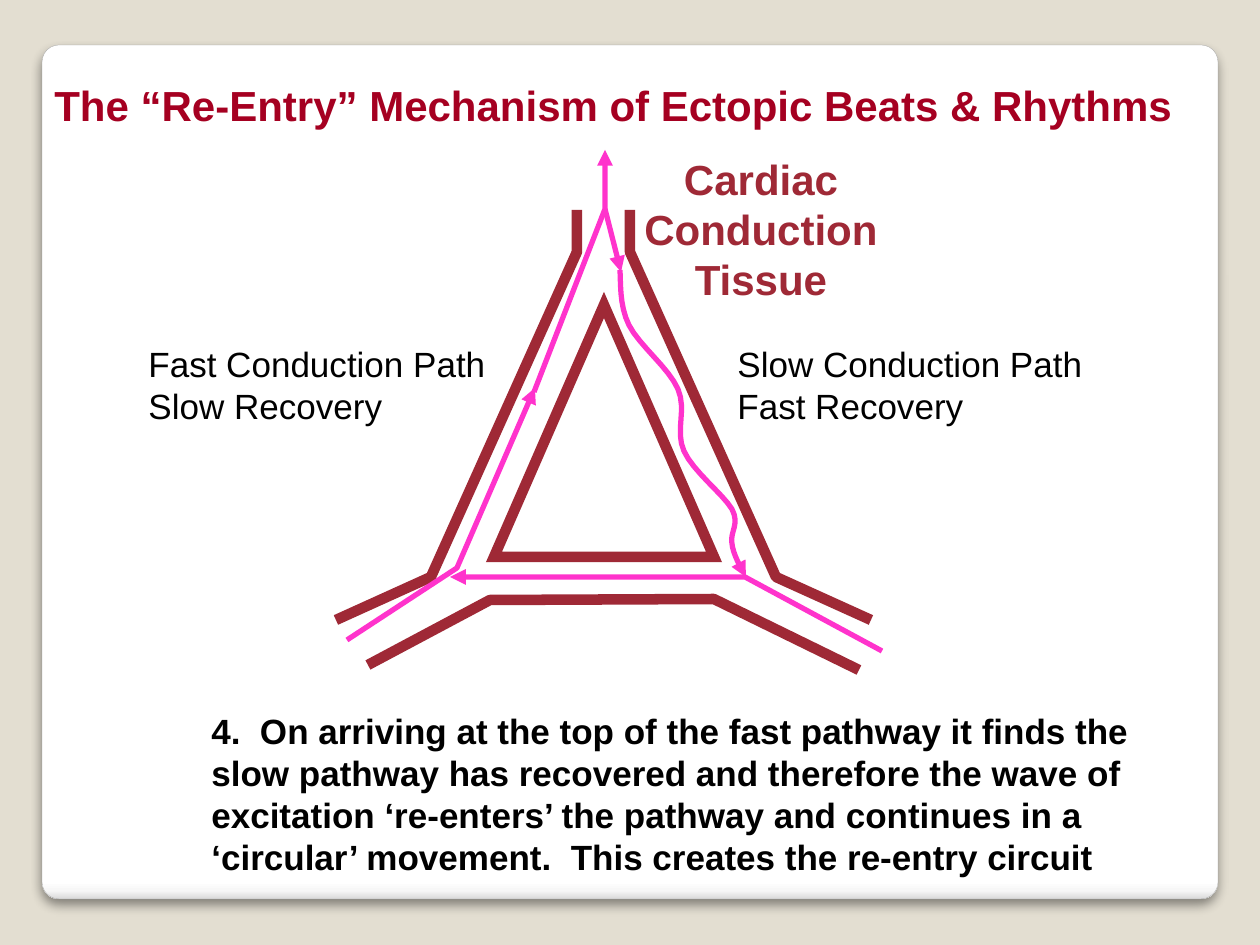
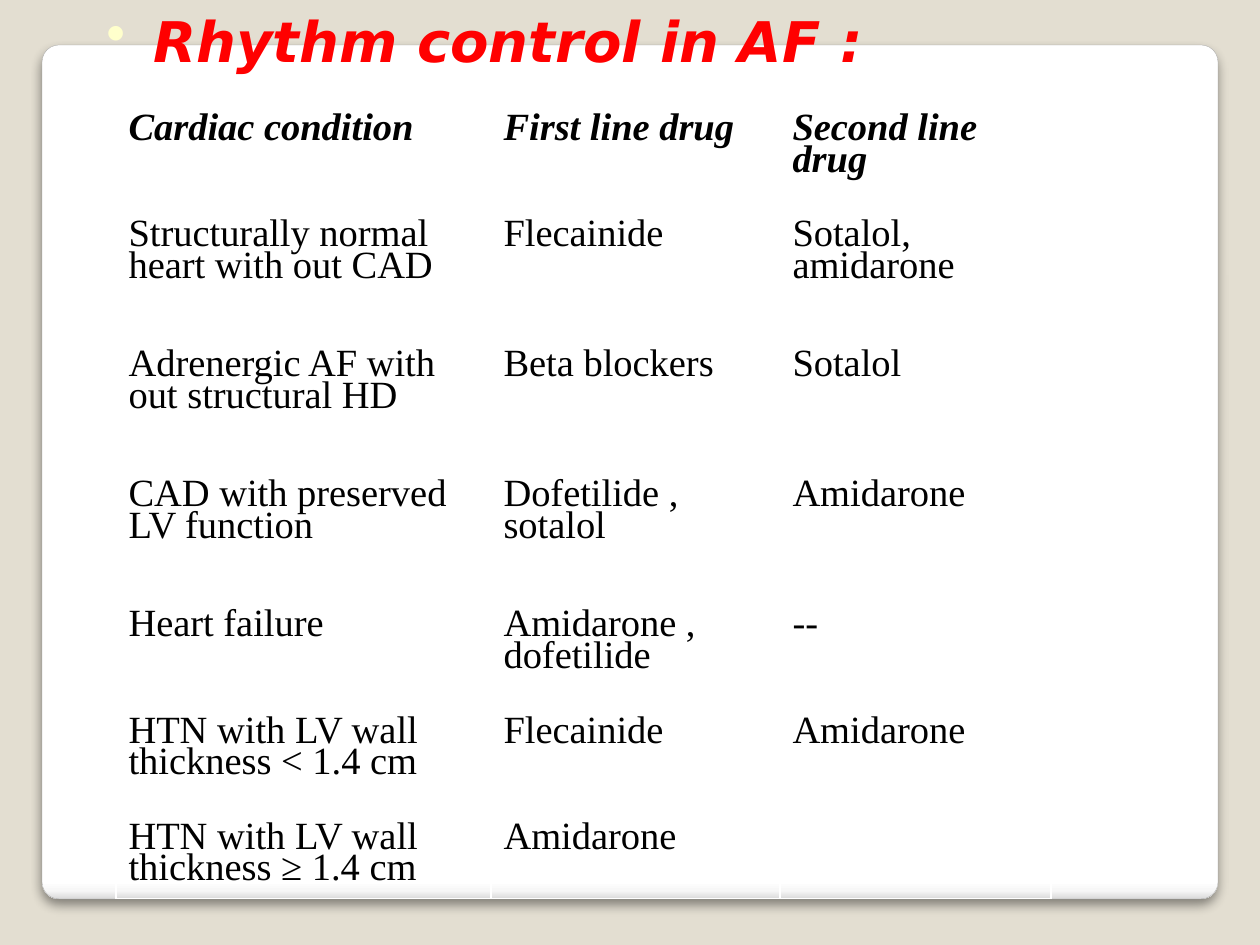
import lxml.etree
import pptx
import pptx.dml.color
import pptx.enum.shapes
import pptx.enum.text
import pptx.oxml.ns
import pptx.util

EMU = 914400 / 126
SLIDE_W, SLIDE_H = 1260, 945
SAND, WHITE, BLACK, EDGE = "E3DED1", "FFFFFF", "000000", "A4A4A4"
TISSUE, IMPULSE, CRIMSON = "9F2936", "FF33CC", "A50021"
RED, CREAM = "FF0000", "FFFFCC"
CARD = (42, 45, 1176, 854)
CARD_STOPS = [(0, WHITE), (98, WHITE), (99, "F7F7F7"), (100, "DADADA")]

BODY = {"name": "Arial", "size": 20, "color": BLACK}
NOTE = {**BODY, "bold": True}
HEADING = {**NOTE, "size": 24, "color": CRIMSON}
LABEL = {**HEADING, "color": TISSUE}
DRUG_TITLE = {"name": "DejaVu Sans", "size": 32, "color": RED, "bold": True, "italic": True}
CELL = {"name": "Times New Roman", "size": 22, "color": BLACK, "bold": False, "italic": False}
CELL_HEAD = {**CELL, "bold": True, "italic": True}

WALL = [(247, 60), (247, 102), (101, 427), (6, 470)]
MIRROR = 547
FLOOR = [(38, 515), (160, 450), (384, 449), (529, 520)]
CORE = (164, 155, 220, 252)
IMPULSES = [
    [(552, 501), (415, 427), (120, 427)],
    [(17, 490), (127, 418), (205, 238)],
    [(204, 242), (275, 59), (275, 0)],
    [(275, 59), (291, 122)],
]
SLOW_PATH = [
    (290, 120),
    (291, 130), (289, 155), (299, 175),
    (309, 195), (339, 218), (348, 239),
    (357, 260), (345, 281), (354, 301),
    (363, 321), (393, 344), (402, 359),
    (410, 374), (400, 382), (402, 393),
    (403, 404), (410, 416), (416, 427),
]

DRUG_COLUMNS = [375, 289, 271]
DRUG_HEIGHTS = [106, 130, 130, 130, 106, 106, 106]
DRUG_ROWS = [
    ("Cardiac condition", "First line drug", "Second line drug"),
    ("Structurally normal heart with out CAD", "Flecainide", "Sotalol, amidarone"),
    ("Adrenergic AF with out structural HD", "Beta blockers", "Sotalol"),
    ("CAD with preserved LV function", "Dofetilide , sotalol", "Amidarone"),
    ("Heart failure", "Amidarone , dofetilide", "--"),
    ("HTN with LV wall thickness < 1.4 cm", "Flecainide", "Amidarone"),
    ("HTN with LV wall thickness ≥ 1.4 cm", "Amidarone", ""),
]


def px(n):
    return pptx.util.Emu(round(n * EMU))


def place(box):
    return [px(n) for n in box]


def rgb(value):
    return pptx.dml.color.RGBColor.from_string(value)


def add_xml(parent, tag, **attrs):
    node = lxml.etree.SubElement(parent, pptx.oxml.ns.qn(tag))
    for key, value in attrs.items():
        node.set(key, str(value))
    return node


def write(p, text, style):
    r = p.add_run()
    r.text = text
    for key, value in style.items():
        if key == "color":
            r.font.color.rgb = rgb(value)
        else:
            setattr(r.font, key, pptx.util.Pt(value) if key == "size" else value)


def add_text(s, box, lines, style, **paragraph):
    tf = s.shapes.add_textbox(*place(box)).text_frame
    tf.word_wrap = True
    for i, line in enumerate(lines):
        p = tf.add_paragraph() if i else tf.paragraphs[0]
        for key, value in paragraph.items():
            setattr(p, key, value)
        write(p, line, style)
    return tf


def indent(p, left, first=0):
    pPr = p._p.get_or_add_pPr()
    pPr.set("marL", str(px(left)))
    pPr.set("indent", str(px(first)))
    return pPr


def add_card(s, box):
    sp = s.shapes.add_shape(
        pptx.enum.shapes.MSO_SHAPE.ROUNDED_RECTANGLE, *place(box))
    sp.adjustments[0] = 0.02
    sp.line.color.rgb = rgb(EDGE)
    sp.line.width = pptx.util.Pt(0.16)
    sp.fill.gradient()
    sp.fill.gradient_angle = 270
    stops = sp._element.spPr.find(".//" + pptx.oxml.ns.qn("a:gsLst"))
    for stop in list(stops):
        stops.remove(stop)
    for position, color in CARD_STOPS:
        add_xml(add_xml(stops, "a:gs", pos=position * 1000), "a:srgbClr", val=color)
    sp.shadow.inherit = False
    effects = sp._element.spPr.find(pptx.oxml.ns.qn("a:effectLst"))
    shadow = add_xml(effects, "a:outerShdw", blurRad=pptx.util.Pt(6),
                     dist=pptx.util.Pt(4), dir=5400000, algn="t", rotWithShape=0)
    add_xml(add_xml(shadow, "a:srgbClr", val=BLACK), "a:alpha", val=44000)


def add_path(s, origin, points, color, width, arrow=False):
    scaled = [(x * EMU, y * EMU) for x, y in points]
    builder = s.shapes.build_freeform(*scaled[0], scale=1.0)
    builder.add_line_segments(scaled[1:], close=False)
    sp = builder.convert_to_shape(*place(origin))
    sp.shadow.inherit = False
    sp.fill.background()
    sp.line.color.rgb = rgb(color)
    sp.line.width = pptx.util.Pt(width)
    if arrow:
        add_xml(sp.line._get_or_add_ln(), "a:tailEnd", type="triangle")


def trace_curve(points, steps=8):
    curve = [points[0]]
    for i in range(0, len(points) - 1, 3):
        a, b, c, d = points[i:i + 4]
        for step in range(1, steps + 1):
            t = step / steps
            weights = ((1 - t) ** 3, 3 * t * (1 - t) ** 2, 3 * t * t * (1 - t), t ** 3)
            curve.append(tuple(
                sum(w * n for w, n in zip(weights, axis)) for axis in zip(a, b, c, d)))
    return curve


def add_circuit(s, box):
    left, top = origin = box[:2]
    x, y, w, h = CORE
    core = s.shapes.add_shape(
        pptx.enum.shapes.MSO_SHAPE.ISOSCELES_TRIANGLE, *place((left + x, top + y, w, h)))
    core.shadow.inherit = False
    core.fill.solid()
    core.fill.fore_color.rgb = rgb(WHITE)
    core.line.color.rgb = rgb(TISSUE)
    core.line.width = pptx.util.Pt(6)
    add_xml(core.line._get_or_add_ln(), "a:miter", lim=800000)
    for wall in (WALL, [(MIRROR - x, y) for x, y in WALL], FLOOR):
        add_path(s, origin, wall, TISSUE, 6)
    for impulse in IMPULSES + [trace_curve(SLOW_PATH)]:
        add_path(s, origin, impulse, IMPULSE, 3, arrow=True)
    for x, speed, recovery in ((-194, "Fast", "Slow"), (395, "Slow", "Fast")):
        add_text(s, (left + x, top + 186, 400, 97),
                 [f"{speed} Conduction Path", f"{recovery} Recovery"], BODY)
    add_text(s, (left + 300, top - 3, 262, 164), ["Cardiac Conduction Tissue"], LABEL,
             alignment=pptx.enum.text.PP_ALIGN.CENTER)


def add_drug_table(s, box):
    table = s.shapes.add_table(
        len(DRUG_ROWS), len(DRUG_COLUMNS), *place(box)).table
    table.first_row = table.horz_banding = False
    for column, width in zip(table.columns, DRUG_COLUMNS):
        column.width = px(width)
    for i, (row, height) in enumerate(zip(table.rows, DRUG_HEIGHTS)):
        row.height = px(height)
        for cell, text in zip(row.cells, DRUG_ROWS[i]):
            cell.fill.background()
            cell.margin_top = pptx.util.Inches(0.25)
            if text:
                p = cell.text_frame.paragraphs[0]
                p.line_spacing = 0.74
                write(p, text, CELL if i else CELL_HEAD)


def add_base(prs):
    s = prs.slides.add_slide(prs.slide_layouts[6])
    s.background.fill.solid()
    s.background.fill.fore_color.rgb = rgb(SAND)
    add_card(s, CARD)
    return s


def build_reentry(prs):
    s = add_base(prs)
    add_circuit(s, (330, 150, 552, 520))
    add_text(s, (42, 73, 1197, 63),
             ["The “Re-Entry” Mechanism of Ectopic Beats & Rhythms"], HEADING)
    note = add_text(s, (73, 703, 1124, 233), [
        "4.  On arriving at the top of the fast pathway it finds the slow pathway "
        "has recovered and therefore the wave of excitation ‘re-enters’ the pathway "
        "and continues in a ‘circular’ movement.  This creates the re-entry circuit",
    ], NOTE, space_before=pptx.util.Pt(5), space_after=pptx.util.Pt(5))
    indent(note.paragraphs[0], 126)


def build_rhythm_control(prs):
    s = add_base(prs)
    title = add_text(s, (94, 0, 1071, 63), ["Rhythm control in AF :"], DRUG_TITLE,
                     space_before=pptx.util.Pt(6))
    pPr = indent(title.paragraphs[0], 47, -47)
    add_xml(add_xml(pPr, "a:buClr"), "a:srgbClr", val=CREAM)
    add_xml(pPr, "a:buChar", char="•")
    add_drug_table(s, (116, 84, sum(DRUG_COLUMNS), sum(DRUG_HEIGHTS)))


def main():
    prs = pptx.Presentation()
    prs.slide_width, prs.slide_height = px(SLIDE_W), px(SLIDE_H)
    build_reentry(prs)
    build_rhythm_control(prs)
    prs.save("out.pptx")


if __name__ == "__main__":
    main()
